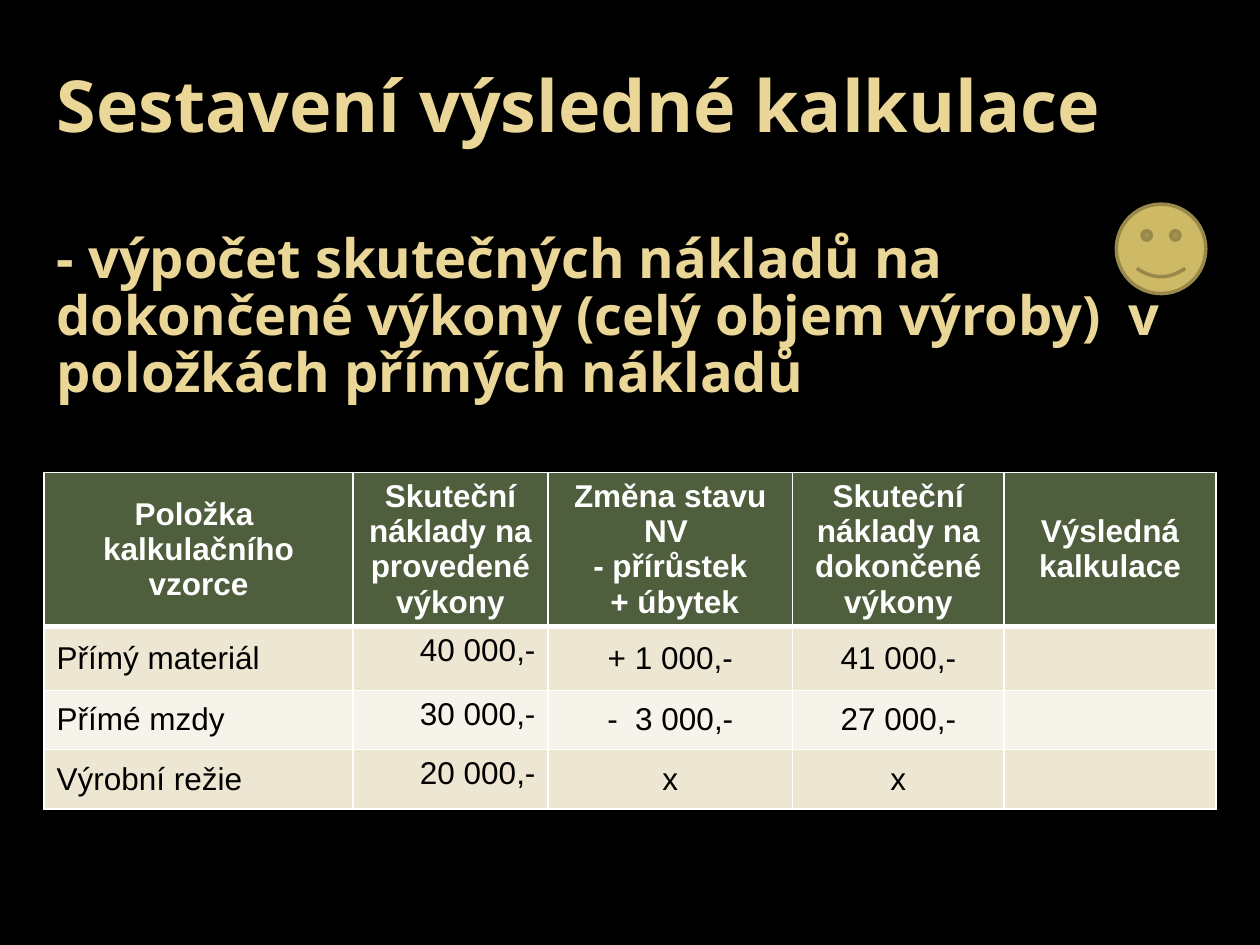
from pptx import Presentation, util as u
from pptx.dml.color import RGBColor
from pptx.enum import shapes, text
from pptx.oxml import parse_xml
from pptx.oxml.ns import nsdecls

COLORS = {
    "background": "000000", "title": "EAD696", "white": "FFFFFF", "body": "000000",
    "header": "4F5E3C", "odd": "EDE6D3", "even": "F6F3EA",
    "smiley": "CEB966", "smiley_line": "98894B",
}
LEFT, CENTER, RIGHT = text.PP_ALIGN.LEFT, text.PP_ALIGN.CENTER, text.PP_ALIGN.RIGHT
MIDDLE, TOP = text.MSO_ANCHOR.MIDDLE, text.MSO_ANCHOR.TOP

HEADERS = [
    ["Položka ", "kalkulačního vzorce"],
    ["Skuteční náklady na provedené výkony"],
    ["Změna stavu NV ", "- přírůstek", " + úbytek"],
    ["Skuteční náklady na dokončené výkony"],
    ["Výsledná kalkulace"],
]
COSTS = [
    ["Přímý materiál", "40 000,-", "+ 1 000,-", "41 000,-", ""],
    ["Přímé mzdy", "30 000,-", "-  3 000,-", "27 000,-", ""],
    ["Výrobní režie", "20 000,-", "x", "x", ""],
]
COLUMN_FORMATS = [(LEFT, MIDDLE), (RIGHT, TOP)] + [(CENTER, MIDDLE)] * 3


def rgb(name):
    return RGBColor.from_string(COLORS[name])


def write_para(para, words, font="Arial", size=18, color="body", bold=False,
               align=LEFT, before=0, spacing=None):
    para.alignment = align
    para.space_before = u.Pt(before)
    para.line_spacing = spacing
    para.font.size = u.Pt(size)
    if words:
        span = para.add_run()
        span.text = words
        span.font.name, span.font.size, span.font.bold = font, u.Pt(size), bold
        span.font.color.rgb = rgb(color)


def write_lines(frame, lines, **style):
    for index, words in enumerate(lines):
        para = frame.add_paragraph() if index else frame.paragraphs[0]
        write_para(para, words, **style)


def set_borders(cell, **widths):
    """Draw white cell borders; widths are points by side: L, R, T, B."""
    properties = cell._tc.get_or_add_tcPr()
    for index, (side, width) in enumerate(widths.items()):
        properties.insert(index, parse_xml(
            f'<a:ln{side} {nsdecls("a")} w="{u.Pt(width)}"><a:solidFill>'
            f'<a:srgbClr val="{COLORS["white"]}"/></a:solidFill></a:ln{side}>'))


class SlideBuilder:
    """Places elements on a grid of 10 columns and 7.5 rows."""

    def __init__(self, deck):
        self.column = deck.slide_width / 10
        self.row = deck.slide_height / 7.5
        self.page = deck.slides.add_slide(deck.slide_layouts[5])
        fill = self.page.background.fill
        fill.solid()
        fill.fore_color.rgb = rgb("background")

    def area(self, left, top, width, height):
        return (round(left * self.column), round(top * self.row),
                round(width * self.column), round(height * self.row))

    def title(self, heading, explanation, *place):
        box = self.page.shapes.title
        box.left, box.top, box.width, box.height = self.area(*place)
        frame = box.text_frame
        frame.word_wrap = True
        frame.auto_size = text.MSO_AUTO_SIZE.NONE
        frame.vertical_anchor = MIDDLE
        frame.margin_top = u.Inches(0.14)
        style = dict(font="Open Sans", color="title", bold=True, spacing=0.88)
        write_para(frame.paragraphs[0], heading, size=41, **style)
        write_para(frame.add_paragraph(), explanation, size=31, before=48.5, **style)

    def table(self, widths, heights, *place):
        grid = self.page.shapes.add_table(
            len(heights), len(widths), *self.area(*place)).table
        for column, width in zip(grid.columns, widths):
            column.width = round(width * self.column)
        for row, height in zip(grid.rows, heights):
            row.height = round(height * self.row)
        for index, lines in enumerate(HEADERS):
            self.cell(grid.cell(0, index), lines, "header", MIDDLE, bottom=3,
                      align=CENTER, color="white", bold=True)
        for number, costs in enumerate(COSTS, 1):
            fill = "odd" if number % 2 else "even"
            for index, (words, (align, anchor)) in enumerate(zip(costs, COLUMN_FORMATS)):
                self.cell(grid.cell(number, index), [words], fill, anchor,
                          top=3 if number == 1 else 1, align=align)

    def cell(self, cell, lines, fill, anchor, top=1, bottom=1, **style):
        cell.fill.solid()
        cell.fill.fore_color.rgb = rgb(fill)
        cell.vertical_anchor = anchor
        set_borders(cell, L=1, R=1, T=top, B=bottom)
        write_lines(cell.text_frame, lines, **style)

    def smiley(self, *place):
        face = self.page.shapes.add_shape(
            shapes.MSO_SHAPE.SMILEY_FACE, *self.area(*place))
        face.shadow.inherit = False
        face.fill.solid()
        face.fill.fore_color.rgb = rgb("smiley")
        face.line.color.rgb = rgb("smiley_line")
        face.line.width = u.Pt(2)


def main():
    deck = Presentation()
    deck.slide_width, deck.slide_height = u.Inches(10), u.Inches(7.5)
    builder = SlideBuilder(deck)
    builder.table([2.45, 1.55, 1.94, 1.68, 1.68], [1.22, 0.51, 0.47, 0.47],
                  0.35, 3.75, 9.29, 2.67)
    builder.title(
        "Sestavení výsledné kalkulace",
        "- výpočet skutečných nákladů na dokončené výkony "
        "(celý objem výroby)  v položkách přímých nákladů",
        0.35, 0.29, 9.29, 3.11)
    builder.smiley(8.86, 1.62, 0.71, 0.71)
    deck.save("out.pptx")


if __name__ == "__main__":
    main()
